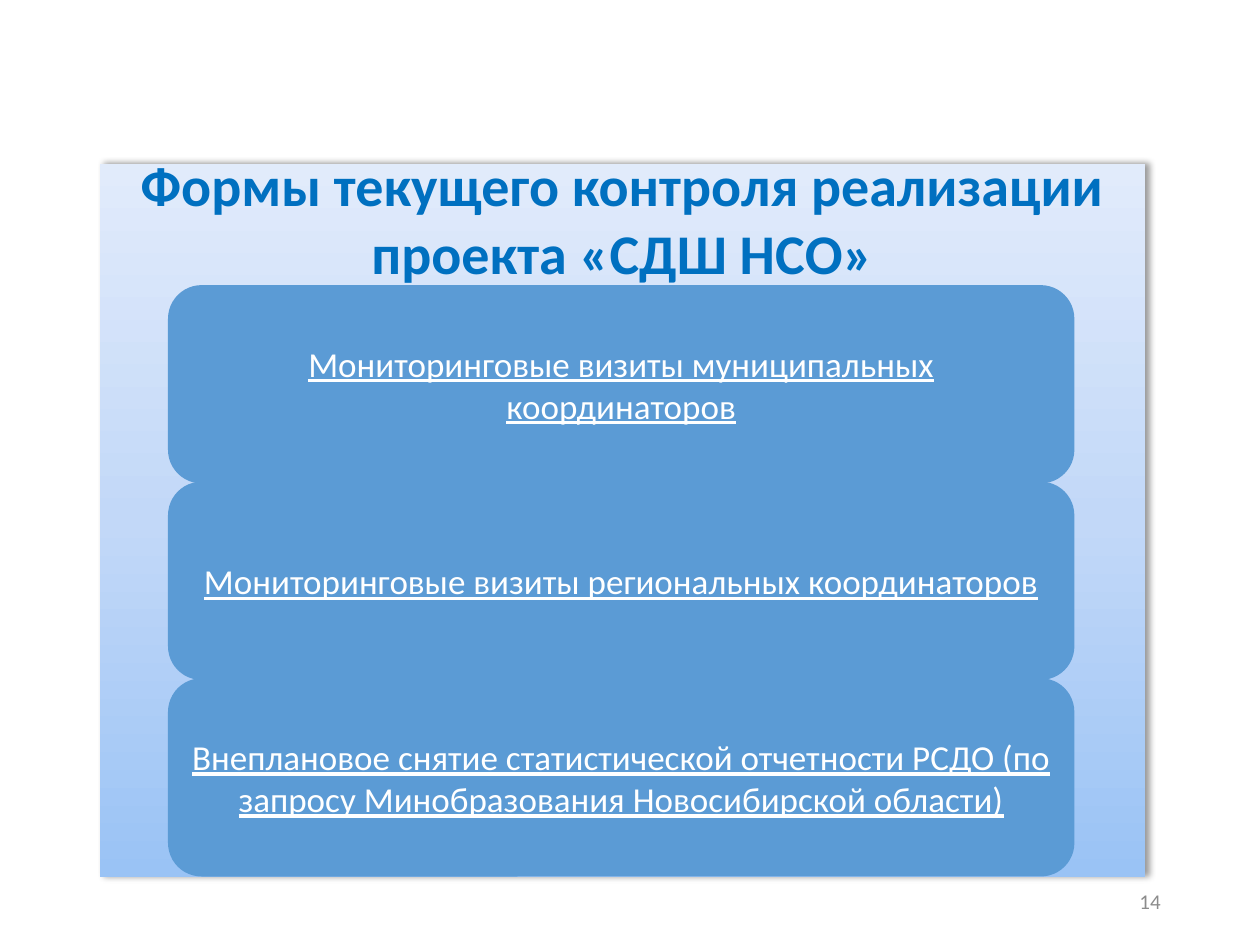
from copy import deepcopy
from lxml.etree import SubElement as Sub
from pptx import Presentation
from pptx.dml.color import RGBColor as Rgb
from pptx.enum.shapes import MSO_SHAPE as Kind
from pptx.enum.text import MSO_ANCHOR as Anchor, PP_ALIGN as Align
from pptx.oxml.ns import qn
from pptx.util import Inches, Pt

WIDE, HIGH = Inches(10), Inches(7.5)
COL, ROW = WIDE // 1000, HIGH // 750
WHITE = Rgb(0xFF, 0xFF, 0xFF)
GREY = Rgb(0x8C, 0x8C, 0x8C)
BLUE = Rgb(0x5B, 0x9B, 0xD5)
DEEP = Rgb(0x00, 0x70, 0xC0)
SHADES = (
    (0, Rgb(0x9A, 0xC3, 0xF5)),
    (0.5, Rgb(0xC2, 0xD8, 0xF8)),
    (1, Rgb(0xE1, 0xEB, 0xFB)),
)

HEAD = {"size": Pt(32), "bold": True}
ITEM = {"size": Pt(20), "underline": True}
FOOT = {"size": Pt(12)}

TITLE = "Формы текущего контроля реализации проекта «СДШ НСО»"
FORMS = (
    "Мониторинговые визиты муниципальных координаторов",
    "Мониторинговые визиты региональных координаторов",
    "Внеплановое снятие статистической отчетности РСДО "
    "(по запросу Минобразования Новосибирской области)",
)


def part(box, col, row, cols, rows):
    return box[0] + col * COL, box[1] + row * ROW, cols * COL, rows * ROW


def write(shape, text, form, color, align=Align.CENTER):
    frame = shape.text_frame
    frame.word_wrap = True
    frame.vertical_anchor = Anchor.MIDDLE
    line = frame.paragraphs[0]
    line.alignment = align
    run = line.add_run()
    run.text = text
    for key, value in {"name": "Calibri", **form}.items():
        setattr(run.font, key, value)
    run.font.color.rgb = color


def panel(slide, box):
    shape = slide.shapes.add_shape(Kind.RECTANGLE, *box)
    shape.line.fill.background()
    fill = shape.fill
    fill.gradient()
    fill.gradient_angle = 90
    stops = shape.element.spPr.find(".//" + qn("a:gsLst"))
    stops.insert(1, deepcopy(stops[0]))
    for stop, (place, color) in zip(fill.gradient_stops, SHADES):
        stop.position = place
        stop.color.rgb = color
    shape.shadow.inherit = False
    glow = Sub(shape.element.spPr.find(qn("a:effectLst")), qn("a:outerShdw"),
               blurRad=str(Pt(4)), dist=str(Pt(3)), dir="0", rotWithShape="0")
    tint = Sub(glow, qn("a:srgbClr"), val="000000")
    Sub(tint, qn("a:alpha"), val="40000")


def title(slide, box):
    write(slide.shapes.add_textbox(*box), TITLE, HEAD, DEEP)


def cards(slide, box):
    for index, text in enumerate(FORMS):
        place = part(box, 0, index * 156, 718, 156)
        shape = slide.shapes.add_shape(Kind.ROUNDED_RECTANGLE, *place)
        shape.shadow.inherit = False
        shape.fill.solid()
        shape.fill.fore_color.rgb = BLUE
        shape.line.color.rgb = BLUE
        shape.line.width = Pt(1)
        write(shape, text, ITEM, WHITE)


def number(slide, box):
    write(slide.shapes.add_textbox(*box), "14", FOOT, GREY, Align.RIGHT)


def main():
    deck = Presentation()
    deck.slide_width, deck.slide_height = WIDE, HIGH
    slide = deck.slides.add_slide(deck.slide_layouts[6])
    page = (0, 0, WIDE, HIGH)
    area = part(page, 79, 130, 830, 566)
    panel(slide, area)
    title(slide, part(area, 0, -11, 830, 108))
    cards(slide, part(area, 55, 97, 718, 468))
    number(slide, part(page, 706, 695, 225, 40))
    deck.save("out.pptx")


if __name__ == "__main__":
    main()
